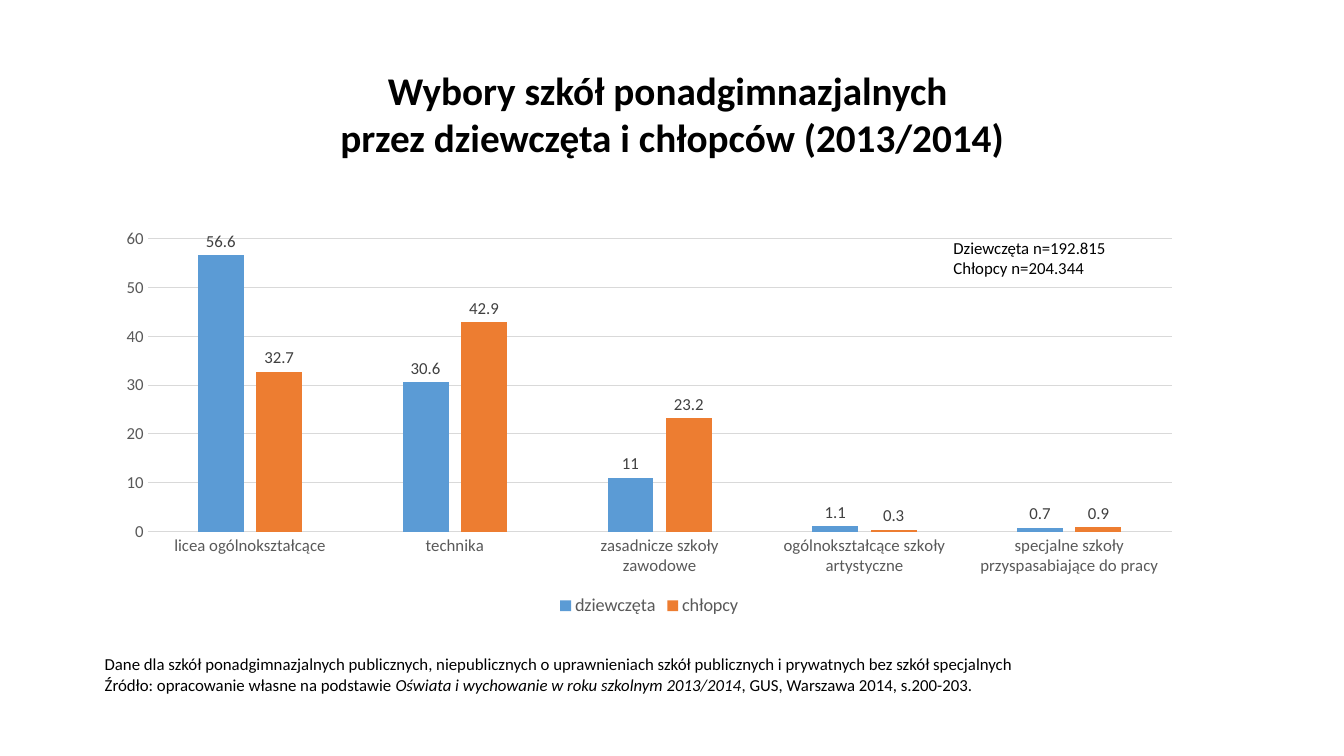
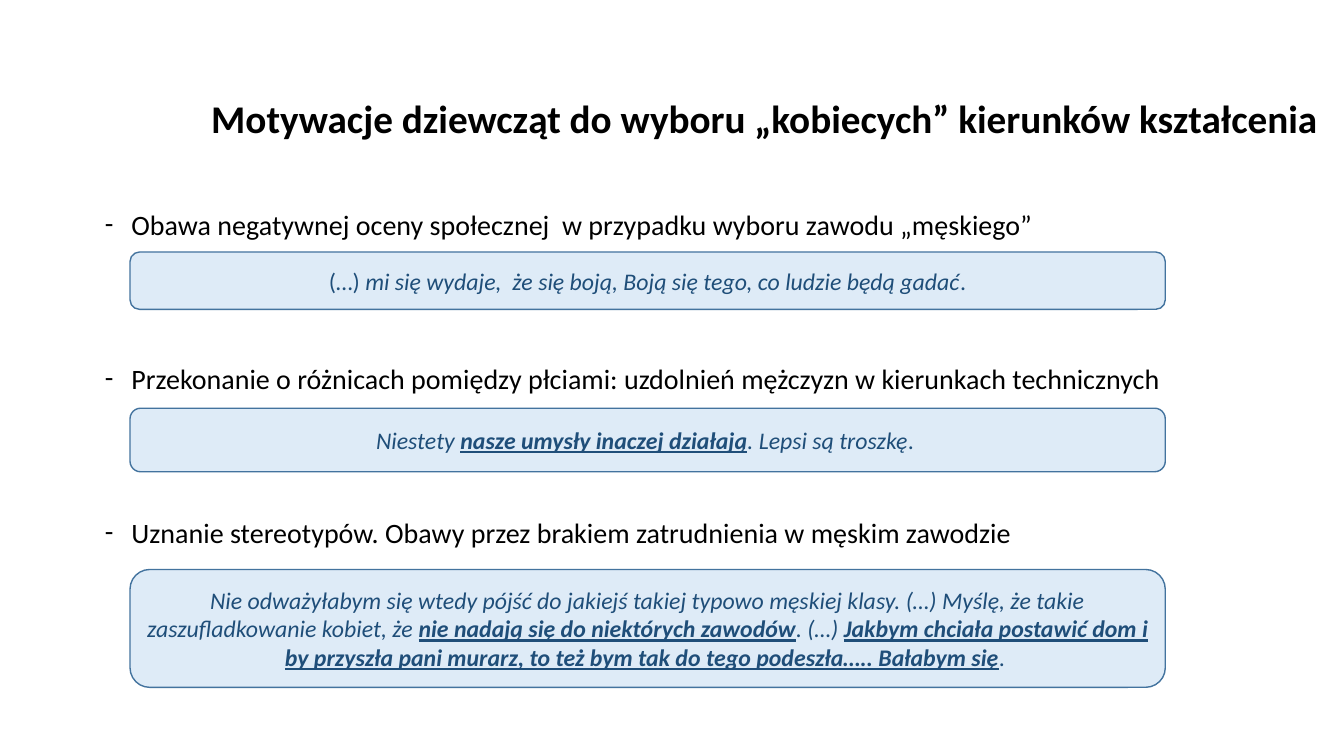
from collections import namedtuple

from lxml.etree import SubElement
from pptx import Presentation
from pptx.chart.data import CategoryChartData
from pptx.dml.color import RGBColor
from pptx.enum.chart import XL_CHART_TYPE, XL_LABEL_POSITION, XL_LEGEND_POSITION, XL_TICK_MARK
from pptx.enum.shapes import MSO_SHAPE
from pptx.enum.text import MSO_ANCHOR, MSO_AUTO_SIZE, PP_ALIGN
from pptx.oxml.ns import qn
from pptx.util import Pt

Box = namedtuple("Box", "left top width height")

FONT = "Calibri"
BLACK = "000000"
AXIS_GREY = "595959"
LABEL_GREY = "404040"
GRID_GREY = "D9D9D9"
CARD_FILL = "DEEBF7"
CARD_LINE = "43739E"
CARD_TEXT = "1F4E79"
TITLE_ONLY, TITLE_AND_CONTENT = 5, 1

CATEGORIES = [
    "licea ogólnokształcące",
    "technika",
    "zasadnicze szkoły zawodowe",
    "ogólnokształcące szkoły artystyczne",
    "specjalne szkoły przyspasabiające do pracy",
]
SERIES = [
    ("dziewczęta", (56.6, 30.6, 11, 1.1, 0.7), "5B9BD5"),
    ("chłopcy", (32.7, 42.9, 23.2, 0.3, 0.9), "ED7D31"),
]
SAMPLE_SIZES = [[("Dziewczęta n=192.815", "")], [("Chłopcy n=204.344", "")]]
SOURCE_NOTE = [
    [("Dane dla szkół ponadgimnazjalnych publicznych, niepublicznych o uprawnieniach "
      "szkół publicznych i prywatnych bez szkół specjalnych", "")],
    [("Źródło: opracowanie własne na podstawie ", ""),
     ("Oświata i wychowanie w roku szkolnym 2013/2014", "i"),
     (", GUS, Warszawa 2014, s.200-203.", "")],
]
MOTIVES = [
    "Obawa negatywnej oceny społecznej  w przypadku wyboru zawodu „męskiego”",
    "Przekonanie o różnicach pomiędzy płciami: uzdolnień mężczyzn w kierunkach technicznych",
    "Uznanie stereotypów. Obawy przez brakiem zatrudnienia w męskim zawodzie",
]
QUOTES = [
    (33, 41, [("(…) ", ""),
              ("mi się wydaje,  że się boją, Boją się tego, co ludzie będą gadać", "i"),
              (".", "")]),
    (144.6, 45.4, [("Niestety ", "i"),
                   ("nasze umysły inaczej działają", "ibu"),
                   (". Lepsi są troszkę", "i"),
                   (". ", "")]),
    (259.8, 84.2, [("Nie odważyłabym się wtedy pójść do jakiejś takiej typowo męskiej klasy. "
                    "(…) Myślę, że takie zaszufladkowanie kobiet, że ", "i"),
                   ("nie nadają się do niektórych zawodów", "ibu"),
                   (". (…) ", "i"),
                   ("Jakbym chciała postawić dom i by przyszła pani murarz, to też bym tak "
                    "do tego podeszła….. Bałabym się", "ibu"),
                   (". ", "")]),
]


def color(value):
    return RGBColor.from_string(value)


def style_font(font, size, value):
    font.name = FONT
    font.size = Pt(size)
    font.color.rgb = color(value)


def place(shape, box):
    shape.left, shape.top, shape.width, shape.height = (Pt(length) for length in box)


def add_runs(paragraph, runs, size, value):
    for text, marks in runs:
        run = paragraph.add_run()
        run.text = text
        style_font(run.font, size, value)
        run.font.bold = "b" in marks
        run.font.italic = "i" in marks
        run.font.underline = "u" in marks


def add_title(slide, box, lines):
    title = slide.shapes.title
    place(title, box)
    frame = title.text_frame
    frame.auto_size = MSO_AUTO_SIZE.NONE
    frame.vertical_anchor = MSO_ANCHOR.MIDDLE
    paragraph = frame.paragraphs[0]
    paragraph.alignment = PP_ALIGN.CENTER
    for index, line in enumerate(lines):
        if index:
            paragraph.add_line_break()
        add_runs(paragraph, [(line, "b")], 28, BLACK)


def add_note(slide, box, lines):
    frame = slide.shapes.add_textbox(*(Pt(length) for length in box)).text_frame
    frame.word_wrap = False
    for index, runs in enumerate(lines):
        paragraph = frame.add_paragraph() if index else frame.paragraphs[0]
        add_runs(paragraph, runs, 12, BLACK)


def style_axes(chart):
    for axis in (chart.category_axis, chart.value_axis):
        style_font(axis.tick_labels.font, 12, AXIS_GREY)
        axis.major_tick_mark = XL_TICK_MARK.NONE
        axis.minor_tick_mark = XL_TICK_MARK.NONE
    values = chart.value_axis
    values.minimum_scale, values.maximum_scale, values.major_unit = 0, 60, 10
    values.format.line.fill.background()
    for line in (chart.category_axis.format.line, values.major_gridlines.format.line):
        line.color.rgb = color(GRID_GREY)
        line.width = Pt(0.75)


def add_school_chart(slide, box):
    data = CategoryChartData()
    data.categories = CATEGORIES
    for name, values, _ in SERIES:
        data.add_series(name, values)
    chart = slide.shapes.add_chart(
        XL_CHART_TYPE.COLUMN_CLUSTERED, *(Pt(length) for length in box), data).chart
    style_font(chart.font, 10, BLACK)
    chart.has_title = False
    chart.has_legend = True
    chart.legend.position = XL_LEGEND_POSITION.BOTTOM
    chart.legend.include_in_layout = False
    style_font(chart.legend.font, 13, AXIS_GREY)
    style_axes(chart)
    plot = chart.plots[0]
    plot.gap_width, plot.overlap = 219, -27
    plot.vary_by_categories = False
    for series, (_, _, fill) in zip(plot.series, SERIES):
        series.format.fill.solid()
        series.format.fill.fore_color.rgb = color(fill)
        labels = series.data_labels
        labels.show_value = True
        labels.position = XL_LABEL_POSITION.OUTSIDE_END
        style_font(labels.font, 12, LABEL_GREY)
    return chart


def add_motives(slide, box):
    body = slide.placeholders[1]
    place(body, box)
    frame = body.text_frame
    frame.auto_size = MSO_AUTO_SIZE.NONE
    for index, motive in enumerate(MOTIVES):
        paragraph = frame.add_paragraph() if index else frame.paragraphs[0]
        properties = paragraph._p.get_or_add_pPr()
        properties.set("marL", str(Pt(19)))
        properties.set("indent", str(-Pt(19)))
        SubElement(properties, qn("a:buFont")).set("typeface", FONT)
        SubElement(properties, qn("a:buChar")).set("char", "-")
        paragraph.line_spacing = 0.9
        paragraph.space_before = Pt(88.4 if index else 0)
        add_runs(paragraph, [(motive, "")], 20, BLACK)


def add_quote_card(slide, box, runs):
    card = slide.shapes.add_shape(
        MSO_SHAPE.ROUNDED_RECTANGLE, *(Pt(length) for length in box))
    card.shadow.inherit = False
    card.fill.solid()
    card.fill.fore_color.rgb = color(CARD_FILL)
    card.line.color.rgb = color(CARD_LINE)
    card.line.width = Pt(1)
    frame = card.text_frame
    frame.word_wrap = True
    frame.vertical_anchor = MSO_ANCHOR.MIDDLE
    paragraph = frame.paragraphs[0]
    paragraph.alignment = PP_ALIGN.CENTER
    add_runs(paragraph, runs, 17, CARD_TEXT)


def add_argument_panel(slide, box):
    add_motives(slide, box)
    for offset, height, runs in QUOTES:
        add_quote_card(slide, Box(box.left + 25.2, box.top + offset, 739.5, height), runs)


def add_chart_panel(slide, box):
    add_school_chart(slide, box)
    add_note(slide, Box(box.left + 599, box.top + 8.6, 127.4, 36), SAMPLE_SIZES)
    add_note(slide, Box(box.left - 7.2, box.top + 306, 669.6, 36), SOURCE_NOTE)


def add_choices_slide(presentation):
    slide = presentation.slides.add_slide(presentation.slide_layouts[TITLE_ONLY])
    add_title(slide, Box(66, 28.8, 828, 104.4),
              ["Wybory szkół ponadgimnazjalnych ", "przez dziewczęta i chłopców (2013/2014)"])
    add_chart_panel(slide, Box(74.9, 157.7, 777.6, 285.8))


def add_motivation_slide(presentation):
    slide = presentation.slides.add_slide(presentation.slide_layouts[TITLE_AND_CONTENT])
    add_title(slide, Box(131.8, 31.7, 828, 104.4),
              ["Motywacje dziewcząt do wyboru „kobiecych” kierunków kształcenia"])
    add_argument_panel(slide, Box(67.7, 147, 828, 313))


def main():
    presentation = Presentation()
    presentation.slide_width = Pt(960)
    presentation.slide_height = Pt(540)
    add_choices_slide(presentation)
    add_motivation_slide(presentation)
    presentation.save("out.pptx")


if __name__ == "__main__":
    main()
